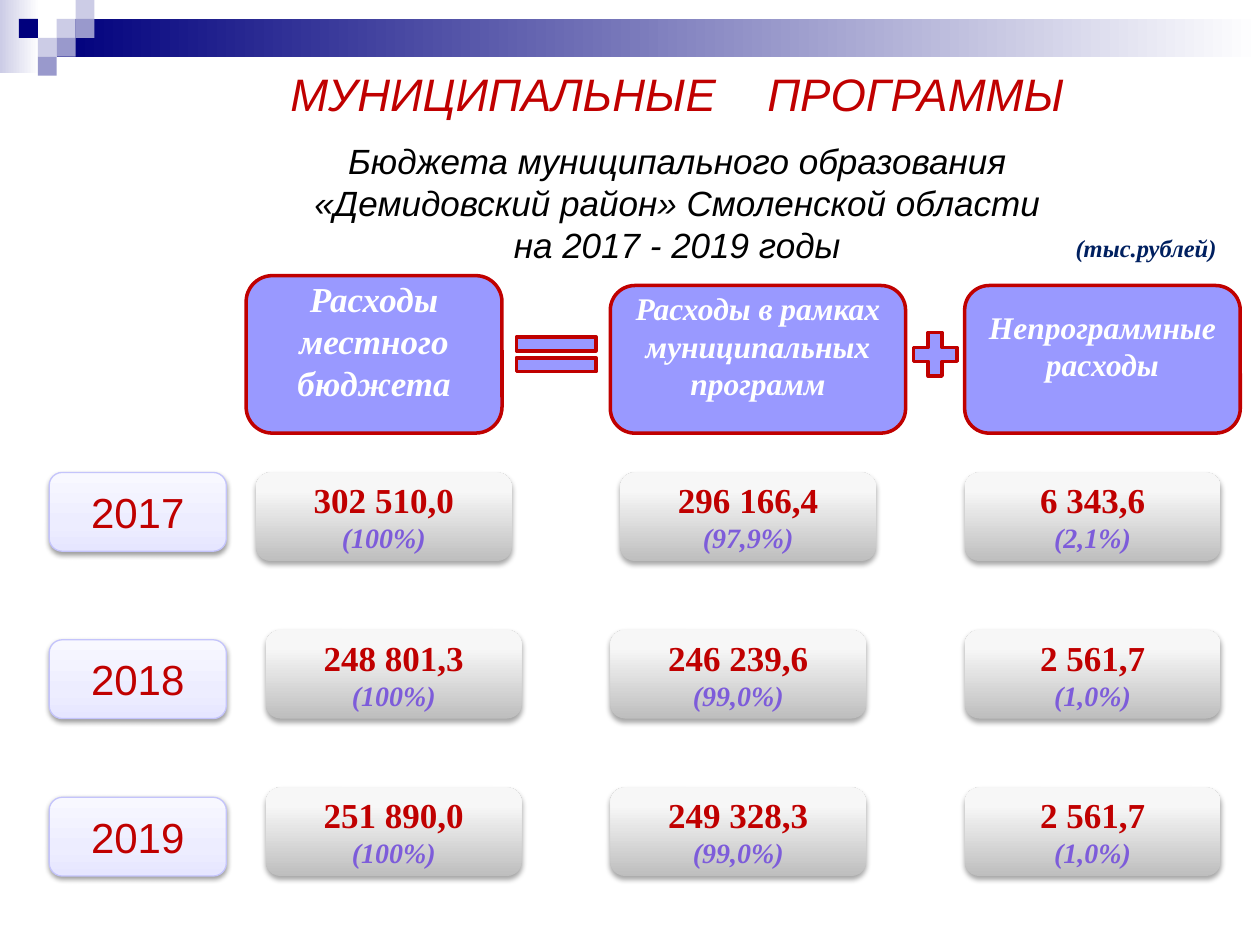
from dataclasses import dataclass

from lxml import etree
from pptx import Presentation
from pptx import util as u
from pptx.dml.color import RGBColor
from pptx.enum import shapes, text
from pptx.oxml import parse_xml
from pptx.oxml.ns import nsdecls, qn

COLUMNS, ROWS = 128, 96
WIDTH, HEIGHT = u.Inches(10), u.Inches(7.5)
SHAPE = shapes.MSO_SHAPE


@dataclass(frozen=True)
class Theme:
    sans: str = "Arial"
    serif: str = "Times New Roman"
    red: str = "C00000"
    black: str = "000000"
    white: str = "FFFFFF"
    label: str = "002060"
    percent: str = "7D5CDA"
    navy: str = "00007D"
    violet: str = "9999CC"
    pale: str = "CCCCE6"
    card: str = "9999FF"
    year_line: str = "C4C4FB"
    value_fill: tuple = ((0, "BEBEBE"), (80, "F7F7F7"), (100, "F8F8F8"))
    year_fill: tuple = ((0, "E6E6FF"), (35, "EDEDFF"), (100, "F8F8FF"))
    title: int = 26
    year: int = 24
    large: int = 20
    medium: int = 18
    small: int = 16
    note: int = 14


def write(paragraph, words, font, size, color, bold=False, italic=False,
          align=text.PP_ALIGN.CENTER, before=0, tracking=0):
    """Add one formatted run; before and tracking are in points."""
    paragraph.alignment = align
    if before:
        paragraph.space_before = u.Pt(before)
    run = paragraph.add_run()
    run.text = words
    run.font.name, run.font.size = font, u.Pt(size)
    run.font.bold, run.font.italic = bold, italic
    run.font.color.rgb = RGBColor.from_string(color)
    if tracking:
        run.font._element.set("spc", str(round(tracking * 100)))


class Board:
    """Draws on one slide; every place is (column, row, columns, rows)."""

    def __init__(self, slide, theme):
        self.slide, self.theme = slide, theme

    @staticmethod
    def place(column, row, columns, rows):
        return (round(column * WIDTH / COLUMNS), round(row * HEIGHT / ROWS),
                round(columns * WIDTH / COLUMNS), round(rows * HEIGHT / ROWS))

    def shape(self, kind, place, fill, angle=0, line=None, line_width=2):
        """A fill is a colour, or (percent, colour) stops for a gradient."""
        shape = self.slide.shapes.add_shape(kind, *self.place(*place))
        shape.shadow.inherit = False
        if isinstance(fill, str):
            shape.fill.solid()
            shape.fill.fore_color.rgb = RGBColor.from_string(fill)
        else:
            self.gradient(shape, fill, angle)
        if line:
            shape.line.color.rgb = RGBColor.from_string(line)
            shape.line.width = u.Pt(line_width)
        else:
            shape.line.fill.background()
        shape.text_frame.word_wrap = True
        shape.text_frame.vertical_anchor = text.MSO_ANCHOR.MIDDLE
        return shape

    @staticmethod
    def gradient(shape, stops, angle):
        shape.fill.gradient()
        shape.fill.gradient_angle = angle
        stop_list = shape._element.spPr.find(".//" + qn("a:gsLst"))
        for stop in list(stop_list):
            stop_list.remove(stop)
        for percent, color in stops:
            stop = etree.SubElement(stop_list, qn("a:gs"), pos=str(percent * 1000))
            etree.SubElement(stop, qn("a:srgbClr"), val=color)

    @staticmethod
    def drop_shadow(shape, opacity, distance):
        effects = shape._element.spPr.find(qn("a:effectLst"))
        effects.append(parse_xml(
            f'<a:outerShdw {nsdecls("a")} blurRad="{u.Pt(3.1)}" dist="{u.Pt(distance)}" '
            f'dir="5400000" rotWithShape="0"><a:srgbClr val="000000">'
            f'<a:alpha val="{opacity * 1000}"/></a:srgbClr></a:outerShdw>'))

    def text_box(self, place, wrap=True):
        frame = self.slide.shapes.add_textbox(*self.place(*place)).text_frame
        frame.word_wrap = wrap
        return frame

    def banner(self):
        theme, tile = self.theme, 1.92
        self.shape(SHAPE.RECTANGLE, (0, 0, 4, 7.4),
                   ((0, theme.pale), (100, theme.white)))
        self.shape(SHAPE.RECTANGLE, (3 * tile, tile, COLUMNS - 3 * tile, 2 * tile),
                   ((0, theme.navy), (100, theme.white)))
        tiles = ((3, 1, theme.pale), (4, 0, theme.pale), (4, 1, theme.violet),
                 (2, 2, theme.pale), (1, 1, theme.navy), (3, 2, theme.violet),
                 (2, 3, theme.violet))
        for column, row, color in tiles:
            self.shape(SHAPE.RECTANGLE, (column * tile, row * tile, tile, tile), color)

    def heading(self, title, lines):
        theme = self.theme
        frame = self.text_box((11, 0, 109.2, 31.2))
        frame.margin_left, frame.margin_top = u.Inches(0.6), u.Inches(0.52)
        first = frame.paragraphs[0]
        title_format = dict(font=theme.sans, size=theme.title, color=theme.red, italic=True)
        write(first, title[0], **title_format)
        write(first, " ", tracking=21.7, **title_format)
        write(first, title[1], **title_format)
        for index, line in enumerate(lines):
            write(frame.add_paragraph(), line, theme.sans, theme.large, theme.black,
                  italic=True, before=0 if index else 11)

    def unit_note(self, words):
        theme = self.theme
        frame = self.text_box((108, 23, 17, 4.3), wrap=False)
        write(frame.paragraphs[0], words, theme.serif, theme.note, theme.label,
              bold=True, italic=True, align=text.PP_ALIGN.LEFT)

    def header_card(self, place, words, size):
        theme = self.theme
        shape = self.shape(SHAPE.ROUNDED_RECTANGLE, place, theme.card, line=theme.red)
        shape.text_frame.margin_bottom = u.Inches(0.27)
        write(shape.text_frame.paragraphs[0], words, theme.serif, size, theme.white,
              bold=True, italic=True)

    def operator(self, kind, place):
        self.shape(kind, place, self.theme.card, line=self.theme.red)

    def year_card(self, row, year):
        theme = self.theme
        shape = self.shape(SHAPE.ROUNDED_RECTANGLE, (5, row, 18, 8), theme.year_fill,
                           angle=90, line=theme.year_line, line_width=0.75)
        self.drop_shadow(shape, 38, 1.6)
        write(shape.text_frame.paragraphs[0], year, theme.sans, theme.year, theme.red)

    def value_card(self, column, row, amount, share, outdent=0):
        theme = self.theme
        shape = self.shape(SHAPE.ROUNDED_RECTANGLE, (column, row, 26, 9),
                           theme.value_fill, angle=90)
        self.drop_shadow(shape, 35, 1.8)
        first = shape.text_frame.paragraphs[0]
        write(first, amount, theme.serif, theme.large, theme.red, bold=True)
        if outdent:
            first._p.get_or_add_pPr().set("indent", str(-u.Pt(outdent)))
        write(shape.text_frame.add_paragraph(), share, theme.serif, theme.small,
              theme.percent, bold=True, italic=True)


def main():
    presentation = Presentation()
    presentation.slide_width, presentation.slide_height = WIDTH, HEIGHT
    theme = Theme()
    board = Board(presentation.slides.add_slide(presentation.slide_layouts[6]), theme)

    board.banner()
    board.heading(("МУНИЦИПАЛЬНЫЕ", "ПРОГРАММЫ"),
                  ("Бюджета муниципального образования",
                   "«Демидовский район» Смоленской области",
                   "на 2017 - 2019 годы"))
    board.header_card((25, 28, 26, 16), "Расходы местного бюджета", theme.large)
    board.operator(SHAPE.MATH_EQUAL, (51, 33, 11, 6))
    board.header_card((62, 29, 30, 15), "Расходы в рамках муниципальных программ",
                      theme.medium)
    board.operator(SHAPE.MATH_PLUS, (92, 33, 6, 6))
    board.header_card((98, 29, 28, 15), "Непрограммные расходы", theme.medium)

    budget = (
        ("2017", 48, (26, 63, 98), 0,
         (("302 510,0", "(100%)"), ("296 166,4", "(97,9%)"), ("6 343,6", "(2,1%)"))),
        ("2018", 65, (27, 62, 98), 10,
         (("248 801,3", "(100%)"), ("246 239,6", "(99,0%)"), ("2 561,7", "(1,0%)"))),
        ("2019", 81, (27, 62, 98), 10,
         (("251 890,0", "(100%)"), ("249 328,3", "(99,0%)"), ("2 561,7", "(1,0%)"))),
    )
    for index, (year, year_row, columns, outdent, values) in enumerate(budget):
        board.year_card(year_row, year)
        for position, (column, value) in enumerate(zip(columns, values)):
            board.value_card(column, 48 + 16 * index, *value,
                             outdent=0 if position else outdent)

    board.unit_note("(тыс.рублей)")
    presentation.save("out.pptx")


if __name__ == "__main__":
    main()
